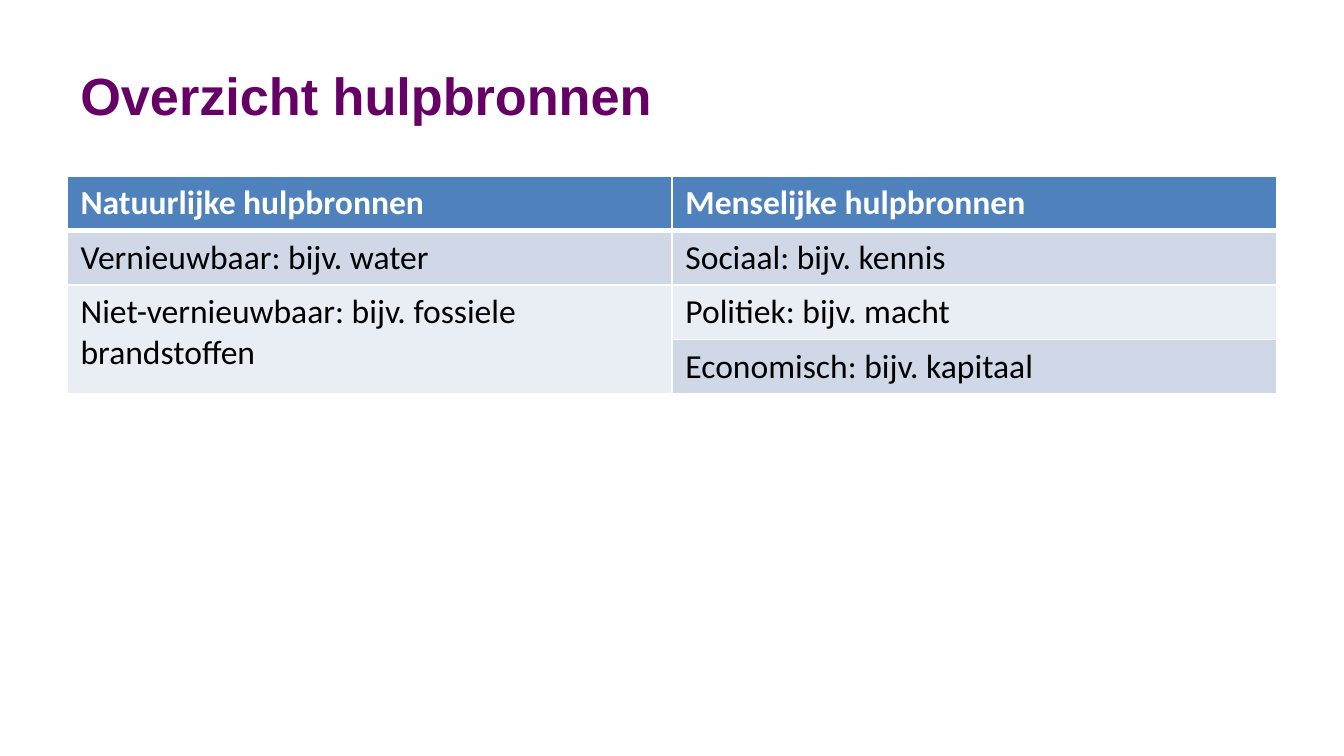
from lxml import etree
from pptx import Presentation
from pptx import util as u
from pptx.dml.color import RGBColor
from pptx.enum import text
from pptx.oxml.ns import qn

HUES = {
    "title": "660066",
    "head": "4F81BD",
    "dark": "D0D8E8",
    "light": "E9EDF4",
    "white": "FFFFFF",
    "black": "000000",
}

ROWS = [
    ["Natuurlijke hulpbronnen", "Menselijke hulpbronnen"],
    ["Vernieuwbaar: bijv. water", "Sociaal: bijv. kennis"],
    ["Niet-vernieuwbaar: bijv. fossiele brandstoffen", "Politiek: bijv. macht"],
    ["", "Economisch: bijv. kapitaal"],
]


class Deck:
    def __init__(self, wide, high):
        self.prs = Presentation()
        self.prs.slide_width = u.Cm(wide)
        self.prs.slide_height = u.Cm(high)
        self.slide = self.prs.slides.add_slide(self.prs.slide_layouts[6])

    def color(self, name):
        return RGBColor.from_string(HUES[name])

    def label(self, frame, words, face, size, hue, bold):
        frame.text = words
        for para in frame.paragraphs:
            for run in para.runs:
                font = run.font
                font.name, font.size, font.bold = face, u.Pt(size), bold
                font.color.rgb = self.color(hue)

    def title(self, words, x, y, w, h):
        box = self.slide.shapes.add_textbox(u.Cm(x), u.Cm(y), u.Cm(w), u.Cm(h))
        frame = box.text_frame
        frame.word_wrap = True
        frame.vertical_anchor = text.MSO_ANCHOR.MIDDLE
        self.label(frame, words, "Arial", 28, "title", True)

    def edges(self, cell, foot):
        """Draw white borders of 1 pt, with a bottom one of foot pt."""
        props = cell._tc.get_or_add_tcPr()
        sides = {"lnL": 1, "lnR": 1, "lnT": 1, "lnB": foot}
        for spot, (tag, width) in enumerate(sides.items()):
            line = etree.Element(qn("a:" + tag), w=str(u.Pt(width)))
            fill = etree.SubElement(line, qn("a:solidFill"))
            etree.SubElement(fill, qn("a:srgbClr"), val=HUES["white"])
            props.insert(spot, line)

    def table(self, rows, x, y, w, h):
        frame = self.slide.shapes.add_table(
            len(rows), len(rows[0]), u.Cm(x), u.Cm(y), u.Cm(w), u.Cm(h))
        grid = frame.table
        for r, row in enumerate(rows):
            head = r == 0
            fill = "head" if head else "dark" if r % 2 else "light"
            for c, words in enumerate(row):
                cell = grid.cell(r, c)
                cell.fill.solid()
                cell.fill.fore_color.rgb = self.color(fill)
                self.edges(cell, 3 if head else 1)
                self.label(cell.text_frame, words, "Calibri", 18,
                           "white" if head else "black", head)
        return grid


def main():
    deck = Deck(25.4, 14.29)
    deck.title("Overzicht hulpbronnen", 1.27, 0.59, 22.86, 2.38)
    grid = deck.table(ROWS, 1.27, 3.33, 22.86, 4.12)
    grid.cell(2, 0).merge(grid.cell(3, 0))
    deck.prs.save("out.pptx")


if __name__ == "__main__":
    main()
